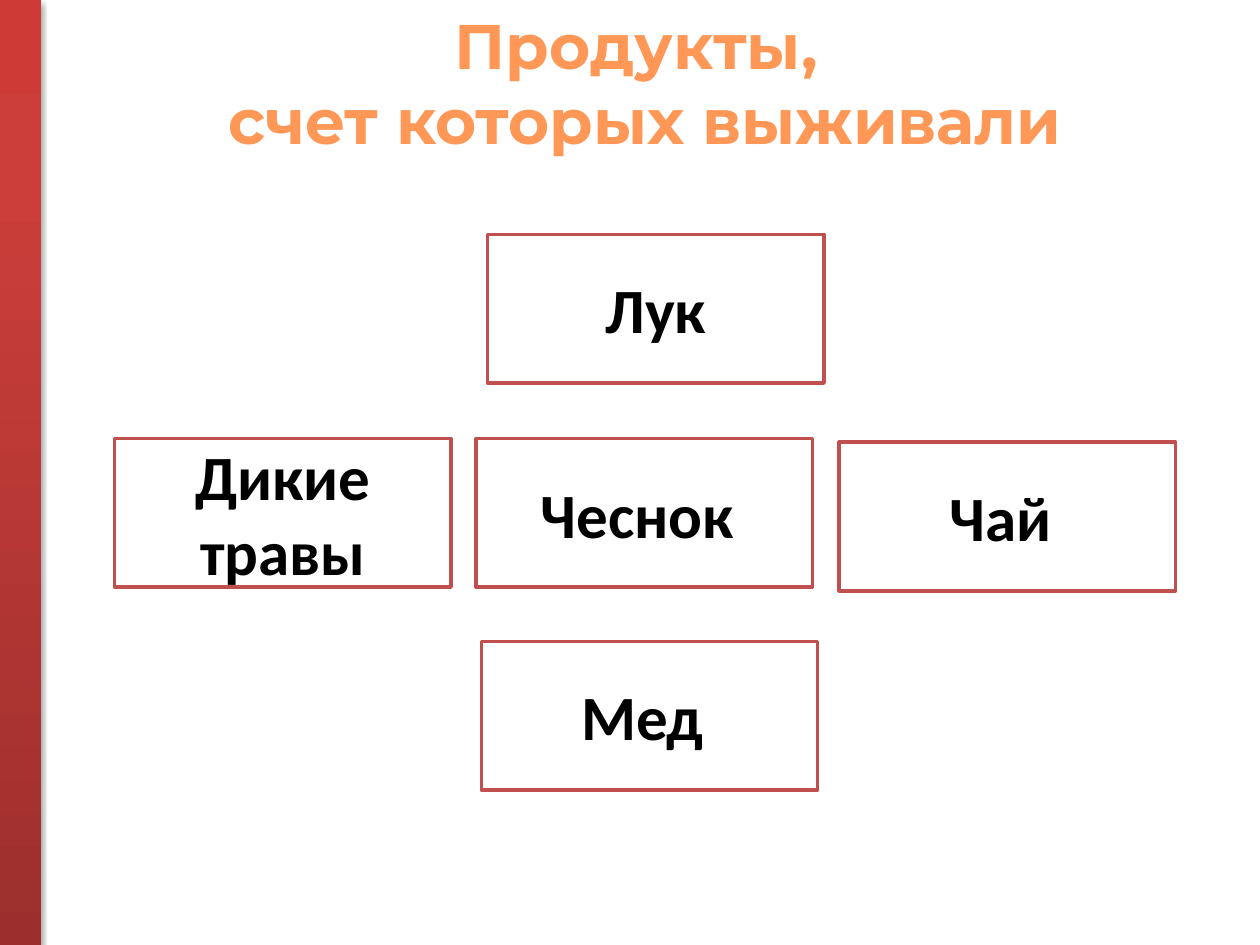
from copy import deepcopy

from lxml.etree import SubElement
from pptx import Presentation
from pptx.dml.color import RGBColor
from pptx.enum.shapes import MSO_SHAPE
from pptx.enum.text import MSO_ANCHOR, MSO_AUTO_SIZE, PP_ALIGN
from pptx.oxml.ns import qn
from pptx.util import Inches, Pt

BAR_STOPS = [(0, "9C2F2D"), (0.8, "CB3E3A"), (1, "CE3B37")]
TITLE_LINES = ["Продукты, ", "счет которых выживали"]
PRODUCTS = [
    ("Мед ", 3.82, 5.09),
    ("Чай ", 6.66, 3.51),
    ("Дикие травы", 0.91, 3.48),
    ("Лук", 3.87, 1.86),
    ("Чеснок ", 3.78, 3.48),
]
CARD_SIZE = (2.67, 1.18)


def color(value):
    """Turn a hex string into a colour."""
    return RGBColor.from_string(value)


def set_attributes(target, values):
    """Set each attribute of the target from a dict."""
    for name, value in values.items():
        setattr(target, name, value)


def write_text(text_frame, lines, font_name, font_color):
    """Fill a text frame with bold centred paragraphs."""
    text_frame.text = "\n".join(lines)
    for paragraph in text_frame.paragraphs:
        paragraph.alignment = PP_ALIGN.CENTER
        set_attributes(paragraph.font, {"name": font_name, "size": Pt(36), "bold": True})
        paragraph.font.color.rgb = color(font_color)


def add_rectangle(slide, box):
    """Add a rectangle without shadow in a box given in inches."""
    shape = slide.shapes.add_shape(MSO_SHAPE.RECTANGLE, *map(Inches, box))
    shape.shadow.inherit = False
    return shape


def add_side_bar(slide, box):
    """Add the red gradient bar with its soft shadow."""
    shape = add_rectangle(slide, box)
    shape.line.fill.background()
    shape.fill.gradient()
    shape.fill.gradient_angle = 90
    properties = shape._element.spPr
    stop_list = properties.find(f".//{qn('a:gsLst')}")
    stop_list.append(deepcopy(stop_list[-1]))
    for stop, (position, value) in zip(shape.fill.gradient_stops, BAR_STOPS):
        stop.position = position
        stop.color.rgb = color(value)
    shadow = SubElement(
        properties.find(qn("a:effectLst")), qn("a:outerShdw"),
        blurRad=str(Pt(3.1)), dist=str(Pt(1.8)), dir="5400000", rotWithShape="0",
    )
    shadow_color = SubElement(shadow, qn("a:srgbClr"), val="000000")
    SubElement(shadow_color, qn("a:alpha"), val="35000")


def add_title(slide, box):
    """Place the title placeholder and write its lines."""
    title = slide.shapes.title
    set_attributes(title, dict(zip(("left", "top", "width", "height"), map(Inches, box))))
    write_text(title.text_frame, TITLE_LINES, "Montserrat", "FF9856")
    set_attributes(title.text_frame, {
        "word_wrap": False,
        "auto_size": MSO_AUTO_SIZE.SHAPE_TO_FIT_TEXT,
        "vertical_anchor": MSO_ANCHOR.TOP,
    })


def add_product(slide, box, name):
    """Add one outlined product card."""
    shape = add_rectangle(slide, box)
    shape.fill.solid()
    shape.fill.fore_color.rgb = color("FFFFFF")
    shape.line.color.rgb = color("C0504D")
    shape.line.width = Pt(2)
    write_text(shape.text_frame, [name], "Calibri", "000000")
    set_attributes(shape.text_frame, {"word_wrap": True, "vertical_anchor": MSO_ANCHOR.MIDDLE})


def main():
    """Build the slide and save it."""
    presentation = Presentation()
    set_attributes(presentation, {"slide_width": Inches(10), "slide_height": Inches(7.5)})
    slide = presentation.slides.add_slide(presentation.slide_layouts.get_by_name("Title Only"))
    add_side_bar(slide, (0, 0, 0.33, 7.5))
    add_title(slide, (1.55, 0, 7.14, 1.31))
    for name, left, top in PRODUCTS:
        add_product(slide, (left, top, *CARD_SIZE), name)
    presentation.save("out.pptx")


if __name__ == "__main__":
    main()
